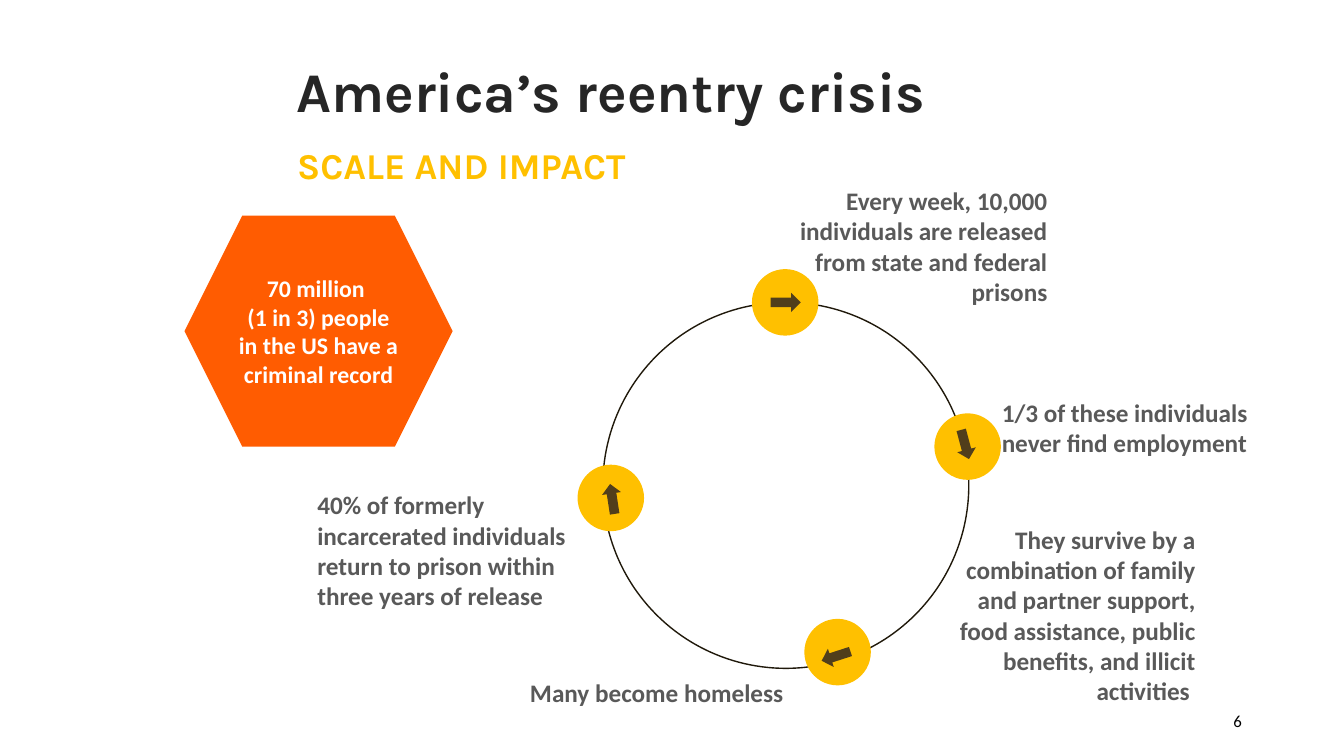
from dataclasses import dataclass

from pptx import Presentation
from pptx.dml.color import RGBColor
from pptx.enum import shapes, text
from pptx.util import Pt

KIND = shapes.MSO_SHAPE
ALIGN = text.PP_ALIGN
ANCHOR = text.MSO_ANCHOR

GOLD, GREY = "FFC000", "595959"
NODE = 47.5  # diameter of a gold circle
ARROW = (13.7, 21.6)  # width, height before turning


@dataclass
class Label:
    words: str
    box: tuple
    size: float = 18
    font: str = "Calibri"
    color: str = GREY
    bold: bool = True
    align: ALIGN = ALIGN.LEFT
    anchor: ANCHOR = ANCHOR.TOP


@dataclass
class Step:
    center: tuple
    arrow: tuple
    turn: float
    label: Label


def paint(fmt, color: str) -> None:
    """Set a font or a solid fill to a hex colour."""
    target = fmt.color if hasattr(fmt, "color") else fmt.fore_color
    target.rgb = RGBColor.from_string(color)


def write(shape, label: Label) -> None:
    frame = shape.text_frame
    frame.text = label.words
    frame.word_wrap = True
    frame.auto_size = text.MSO_AUTO_SIZE.NONE
    frame.vertical_anchor = label.anchor
    for para in frame.paragraphs:
        para.alignment = label.align
        for run in para.runs:
            run.font.name = label.font
            run.font.size = Pt(label.size)
            run.font.bold = label.bold
            paint(run.font, label.color)


def place(shape, box: tuple) -> None:
    shape.left, shape.top, shape.width, shape.height = map(Pt, box)


def add_label(slide, label: Label) -> None:
    write(slide.shapes.add_textbox(*map(Pt, label.box)), label)


def add_form(slide, kind: KIND, box: tuple, fill: str = "", line: str = ""):
    shape = slide.shapes.add_shape(kind, *map(Pt, box))
    shape.shadow.inherit = False
    if fill:
        shape.fill.solid()
        paint(shape.fill, fill)
    else:
        shape.fill.background()
    if line:
        paint(shape.line, line)
        shape.line.width = Pt(1)
    else:
        shape.line.fill.background()
    return shape


def around(center: tuple, width: float, height: float) -> tuple:
    """Box of the given size around a centre point."""
    return center[0] - width / 2, center[1] - height / 2, width, height


TITLE = Label("America’s reentry crisis", (204.5, 36.7, 695.5, 55.4),
              40, "Karla", "262626")
EXTRAS = [
    Label("SCALE AND IMPACT", (205.2, 98.6, 283.7, 38.9), 26, "Karla", GOLD),
    Label("6", (678.2, 500.4, 216, 28.8), 12, color="000000", bold=False,
          align=ALIGN.RIGHT, anchor=ANCHOR.MIDDLE),
]
FACT = Label("70 million \n(1 in 3) people in the US have a criminal record",
             (131.8, 154.1, 191.5, 164.9), 17, color="FFFFFF",
             align=ALIGN.CENTER, anchor=ANCHOR.MIDDLE)
STEPS = [
    Step((560.9, 216), (561.2, 216), 270, Label(
        "Every week, 10,000 individuals are released from state and federal "
        "prisons", (539.3, 128.9, 216, 94.3), align=ALIGN.RIGHT)),
    Step((691.2, 319), (689.4, 317.5), 345.1, Label(
        "1/3 of these individuals never find employment",
        (708.5, 280.1, 199.4, 51.1))),
    Step((598.3, 465.8), (597.2, 468.7), 72.1, Label(
        "Many become homeless", (371.5, 480.2, 199.4, 28.8))),
    Step((436.3, 355.7), (437.4, 356.4), 171.3, Label(
        "40% of formerly incarcerated individuals return to prison within "
        "three years of release", (219.6, 346.3, 220.3, 94.3))),
]
SURVIVAL = Label(
    "They survive by a combination of family and partner support, food "
    "assistance, public benefits, and illicit activities ",
    (658.8, 370.8, 202.3, 138.2), align=ALIGN.RIGHT)


def main() -> None:
    deck = Presentation()
    deck.slide_width, deck.slide_height = Pt(960), Pt(540)
    slide = deck.slides.add_slide(deck.slide_layouts[5])

    # Headings and page number
    title = slide.shapes.title
    place(title, TITLE.box)
    write(title, TITLE)
    for label in EXTRAS:
        add_label(slide, label)

    # Key fact
    write(add_form(slide, KIND.HEXAGON, FACT.box, "FF5C01"), FACT)

    # Cycle: ring, then circle, arrow and label of each step
    add_form(slide, KIND.OVAL, (430.6, 216, 261.4, 261.4), line="20190B")
    for step in STEPS:
        add_form(slide, KIND.OVAL, around(step.center, NODE, NODE), GOLD)
        arrow = add_form(slide, KIND.DOWN_ARROW, around(step.arrow, *ARROW),
                         "513E1B")
        arrow.rotation = step.turn
        add_label(slide, step.label)
    add_label(slide, SURVIVAL)

    deck.save("out.pptx")


if __name__ == "__main__":
    main()
